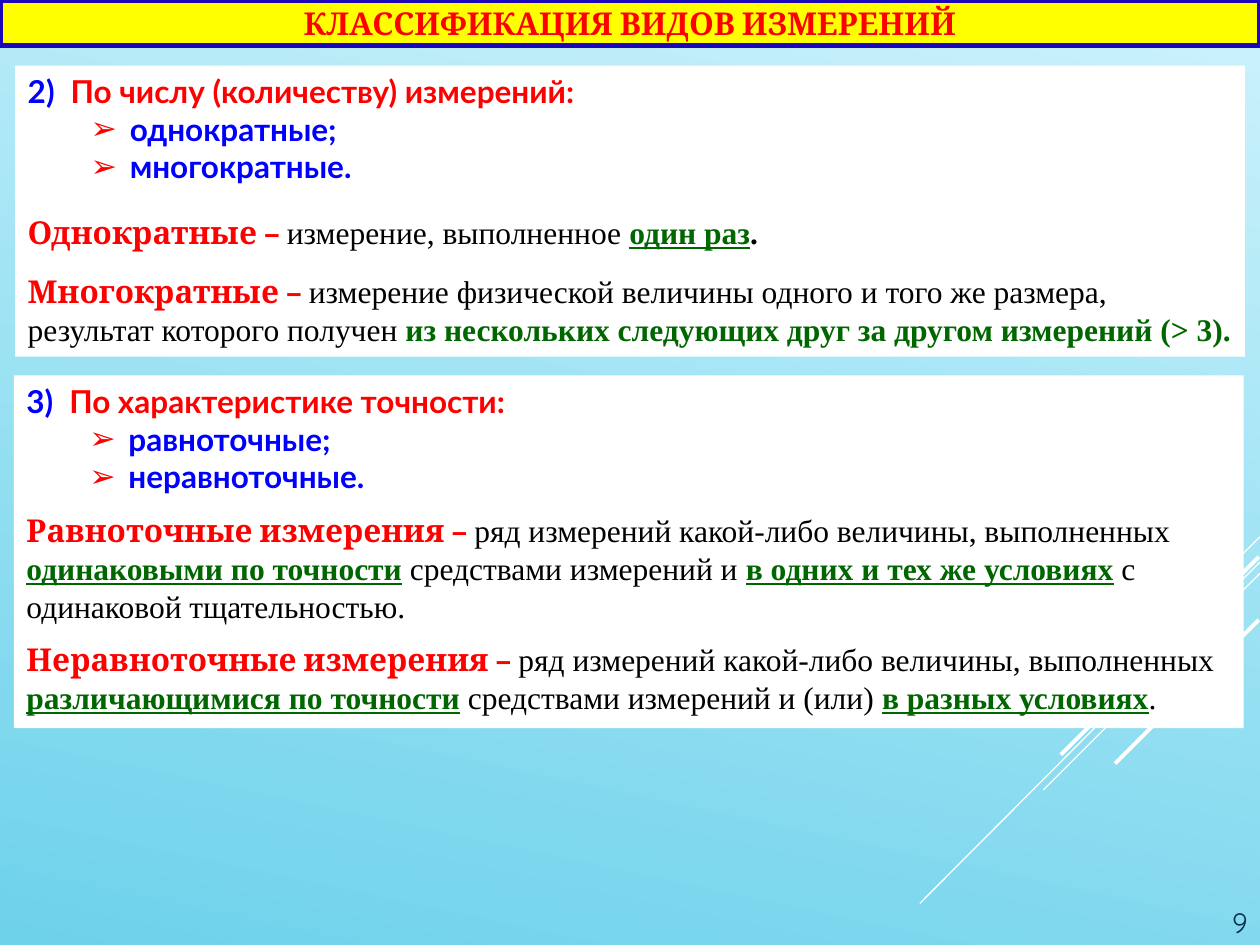
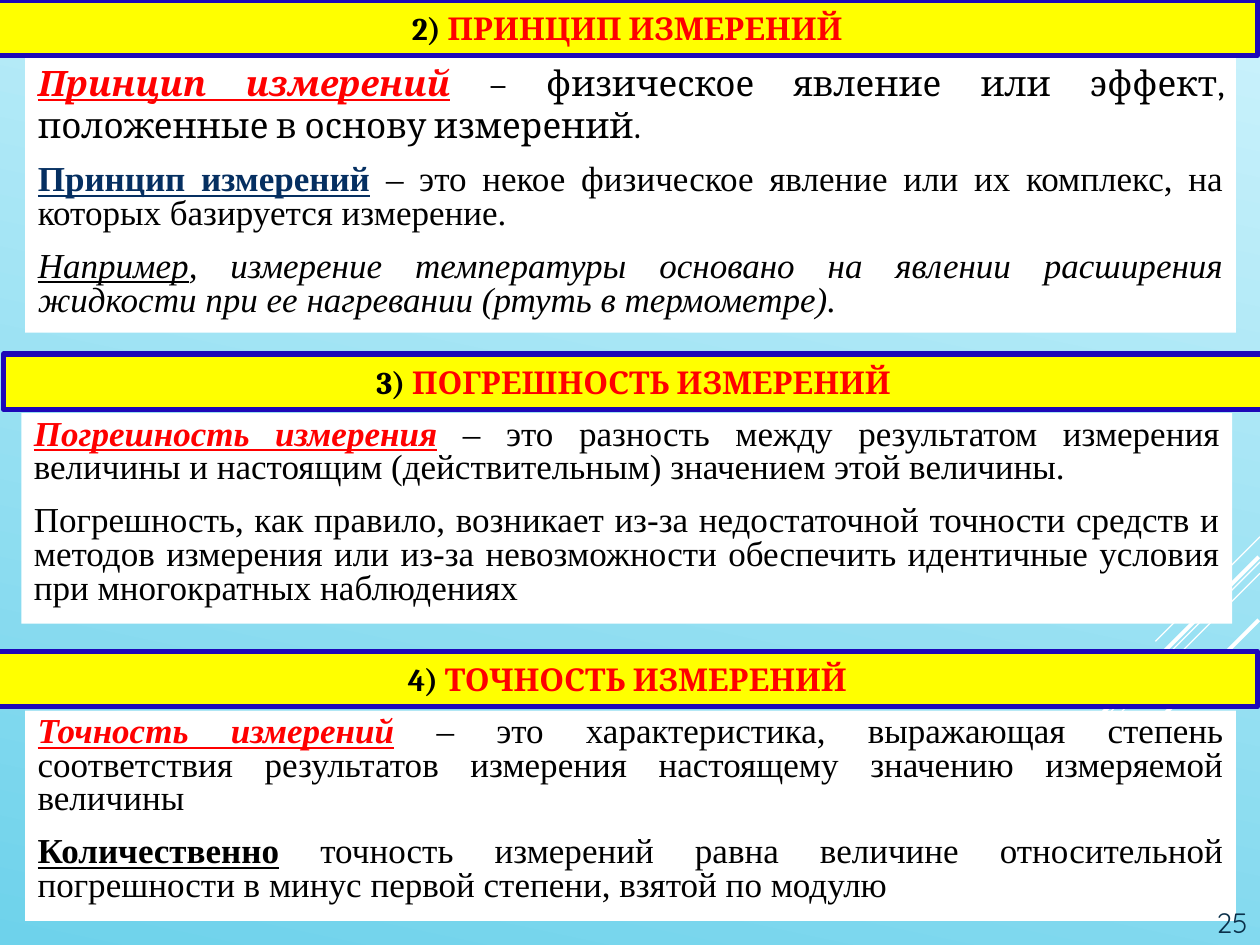
from collections import namedtuple

from lxml import etree
from pptx import Presentation
from pptx.dml.color import RGBColor
from pptx.enum.shapes import MSO_CONNECTOR, MSO_SHAPE
from pptx.enum.text import MSO_ANCHOR, MSO_AUTO_SIZE, PP_ALIGN
from pptx.oxml.ns import qn
from pptx.util import Inches, Pt

LINE, RECT = MSO_CONNECTOR.STRAIGHT, MSO_SHAPE.RECTANGLE
TOP, MIDDLE, BOTTOM = MSO_ANCHOR.TOP, MSO_ANCHOR.MIDDLE, MSO_ANCHOR.BOTTOM
LEFT, CENTER, RIGHT, JUSTIFY = PP_ALIGN.LEFT, PP_ALIGN.CENTER, PP_ALIGN.RIGHT, PP_ALIGN.JUSTIFY
FIXED = MSO_AUTO_SIZE.NONE

SKY = RGBColor(0xC8, 0xF1, 0xFB)
AQUA = RGBColor(0x6E, 0xD2, 0xEB)
WHITE = RGBColor(0xFF, 0xFF, 0xFF)
BLACK = RGBColor(0, 0, 0)
YELLOW = RGBColor(0xFF, 0xFF, 0)
RED = RGBColor(0xFF, 0, 0)
BLUE = RGBColor(0, 0, 0xFF)
GREEN = RGBColor(0, 0x66, 0)
NAVY = RGBColor(0x05, 0x2F, 0x61)
INK = RGBColor(0x0A, 0x30, 0x4A)
EDGE = RGBColor(0x1D, 0x08, 0xB8)

SERIF, TIMES, SANS, ROUND = "Cambria", "Times New Roman", "Lato", "Quicksand"

Style = namedtuple("Style", "face color bold italic under", defaults=(False, False, False))
PLAIN = Style(TIMES, BLACK)
SLANT = PLAIN._replace(italic=True)
STRONG = Style(TIMES, GREEN, True)
KEY = STRONG._replace(under=True)
TERM = Style(SERIF, RED, True)
LEAD = Style(TIMES, RED, True, True, True)
HEAD = Style(SANS, RED, True)
ITEM = Style(SANS, BLUE, True)
MARK = Style(SERIF, BLACK, True)
PAGE = Style(ROUND, INK)

# from x, from y, to x, to y, width
RAYS = [
    (10, 4.26, 9.17, 5.09, 0.75),
    (10, 4.46, 7.3, 7.17, 0.75),
    (10, 4.55, 8.28, 6.27, 0.75),
    (9.99, 4.42, 8.42, 5.99, 2.25),
    (9.99, 4.92, 8.85, 6.06, 2.25),
]


def paint(font, style):
    font.name, font.color.rgb = style.face, style.color
    font.bold, font.italic, font.underline = style.bold, style.italic, style.under


class Deck:
    def __init__(self):
        self.prs = Presentation()
        self.prs.slide_width, self.prs.slide_height = Inches(10), Inches(7.5)
        fill = self.prs.slide_master.background.fill
        fill.gradient()
        fill.gradient_angle = 258
        for stop, color, place in zip(fill.gradient_stops, (SKY, AQUA), (0.04, 1)):
            stop.color.rgb, stop.position = color, place

    def start(self, layout):
        self.slide = self.prs.slides.add_slide(self.prs.slide_layouts[layout])
        self.shapes = self.slide.shapes
        self.bodies = [b for b in self.slide.placeholders if b.placeholder_format.idx]
        for x1, y1, x2, y2, width in RAYS:
            self.ray(x1, y1, x2, y2, width)

    def ray(self, x1, y1, x2, y2, width):
        line = self.shapes.add_connector(LINE, Inches(x1), Inches(y1), Inches(x2), Inches(y2))
        line.line.color.rgb, line.line.width = WHITE, Pt(width)
        etree.SubElement(line._element.spPr, qn("a:effectLst"))

    def box(self, area, fill, anchor, shape=None):
        """Fill a rectangle, or a placeholder brought to the front, and return it."""
        area = [Inches(n) for n in area]
        if shape is None:
            shape = self.shapes.add_shape(RECT, *area)
        else:
            shape.left, shape.top, shape.width, shape.height = area
            self.shapes._spTree.append(shape._element)
        shape.shadow.inherit = False
        shape.fill.solid()
        shape.fill.fore_color.rgb = fill
        shape.line.fill.background()
        frame = shape.text_frame
        frame.auto_size, frame.word_wrap, frame.vertical_anchor = FIXED, True, anchor
        return shape

    def para(self, frame, parts, size, align=LEFT, before=0, after=0, spacing=1.0,
             margin=0, hang=0, bullet=None):
        para = frame.paragraphs[0]
        if para.runs:
            para = frame.add_paragraph()
        para.alignment, para.line_spacing = align, spacing
        para.space_before, para.space_after = Pt(before), Pt(after)
        props = para._p.get_or_add_pPr()
        props.set("marL", str(Inches(margin)))
        props.set("indent", str(-Inches(hang)))
        if bullet:
            para.level = 1
            color = etree.SubElement(props, qn("a:buClr"))
            etree.SubElement(color, qn("a:srgbClr"), val=str(RED))
            etree.SubElement(props, qn("a:buChar"), char=bullet)
        else:
            etree.SubElement(props, qn("a:buNone"))
        para.font.size = Pt(size)
        for text, style in parts:
            run = para.add_run()
            run.text = text
            paint(para.font if len(parts) == 1 else run.font, style)

    def band(self, area, parts, title=False):
        shape = self.box(area, YELLOW, MIDDLE, self.shapes.title if title else None)
        shape.line.color.rgb, shape.line.width = EDGE, Pt(3)
        shape.text_frame.word_wrap = False
        self.para(shape.text_frame, parts, 18, CENTER)

    def panel(self, area):
        """Make a white panel from the next free body placeholder or a new shape."""
        body = self.bodies.pop(0) if self.bodies else None
        return self.box(area, WHITE, TOP, body).text_frame

    def kinds(self, area, mark, head, items, terms):
        """Panel with a numbered heading, arrow bullets and definitions."""
        frame = self.panel(area)
        self.para(frame, [(mark + "\t", ITEM), (head, HEAD)], 18, margin=0.34, hang=0.34)
        for item in items:
            self.para(frame, [(item, ITEM)], 18, margin=0.81, hang=0.31, bullet="➢")
        for before, after, parts in terms:
            self.para(frame, parts, 18, before=before, after=after)

    def prose(self, area, paras, first=0.8):
        """Panel of justified text; first is the line spacing of its first paragraph."""
        frame = self.panel(area)
        for n, parts in enumerate(paras):
            self.para(frame, parts, 20, JUSTIFY, before=11 if n else 0,
                      spacing=0.8 if n else first)

    def page(self, number):
        box = self.shapes.add_textbox(Inches(9.06), Inches(6.77), Inches(0.94), Inches(0.73))
        box.text_frame.word_wrap, box.text_frame.vertical_anchor = True, BOTTOM
        self.para(box.text_frame, [(number, PAGE)], 16, RIGHT)


def kinds_slide(deck):
    deck.start(3)
    deck.page("9")
    deck.band((0, 0, 10, 0.36), [("КЛАССИФИКАЦИЯ ВИДОВ ИЗМЕРЕНИЙ", TERM)], title=True)
    deck.kinds(
        (0.12, 0.52, 9.76, 2.31), "2)", "По числу (количеству) измерений:",
        ["однократные;", "многократные."],
        [
            (16, 6, [("Однократные – ", TERM), ("измерение, выполненное ", PLAIN),
                     ("один раз", KEY), (".", PLAIN._replace(bold=True))]),
            (6, 6, [("Многократные – ", TERM),
                    ("измерение физической величины одного и того же размера, "
                     "результат которого получен ", PLAIN),
                    ("из нескольких следующих друг за другом измерений (> 3).", STRONG)]),
        ])
    series = "ряд измерений какой-либо величины, выполненных "
    deck.kinds(
        (0.11, 2.98, 9.76, 2.8), "3)", "По характеристике точности:",
        ["равноточные;", "неравноточные."],
        [
            (9, 0, [("Равноточные измерения – ", TERM), (series, PLAIN),
                    ("одинаковыми по точности", KEY), (" средствами измерений и ", PLAIN),
                    ("в одних и тех же условиях", KEY),
                    (" c одинаковой тщательностью.", PLAIN)]),
            (9, 0, [("Неравноточные измерения – ", TERM), (series, PLAIN),
                    ("различающимися по точности", KEY),
                    (" средствами измерений и (или) ", PLAIN),
                    ("в разных условиях", KEY), (".", PLAIN)]),
        ])


def terms_slide(deck):
    deck.start(1)
    deck.prose((0.2, 0.44, 9.61, 2.2), [
        [("Принцип измерений", LEAD._replace(face=SERIF)),
         (" – физическое явление или эффект, положенные в основу измерений.",
          PLAIN._replace(face=SERIF))],
        [("Принцип измерений", KEY._replace(color=NAVY)),
         (" – это некое физическое явление или их комплекс, на которых базируется измерение.",
          PLAIN)],
        [("Например", SLANT._replace(under=True)),
         (", измерение температуры основано на явлении расширения жидкости "
          "при ее нагревании (ртуть в термометре).", SLANT)],
    ], first=1.0)
    deck.prose((0.17, 3.28, 9.61, 1.67), [
        [("Погрешность измерения", LEAD),
         (" – это разность между результатом измерения величины и настоящим "
          "(действительным) значением этой величины.", PLAIN)],
        [("Погрешность, как правило, возникает из-за недостаточной точности средств "
          "и методов измерения или из-за невозможности обеспечить идентичные условия "
          "при многократных наблюдениях", PLAIN)],
    ])
    deck.prose((0.2, 5.64, 9.61, 1.67), [
        [("Точность измерений", LEAD),
         (" – это характеристика, выражающая степень соответствия результатов "
          "измерения настоящему значению измеряемой величины", PLAIN)],
        [("Количественно", KEY._replace(color=BLACK)),
         (" точность измерений равна величине относительной погрешности "
          "в минус первой степени, взятой по модулю", PLAIN)],
    ])
    deck.page("25")
    bands = [(-0.02, 0, "ПРИНЦИП"), (0.03, 2.81, "ПОГРЕШНОСТЬ"), (-0.02, 5.17, "ТОЧНОСТЬ")]
    for n, (left, top, word) in enumerate(bands, 2):
        deck.band((left, top, 10, 0.44), [(f"{n}) ", MARK), (word + " ИЗМЕРЕНИЙ", TERM)],
                  title=n == 2)


def main():
    deck = Deck()
    kinds_slide(deck)
    terms_slide(deck)
    deck.prs.save("out.pptx")


if __name__ == "__main__":
    main()
